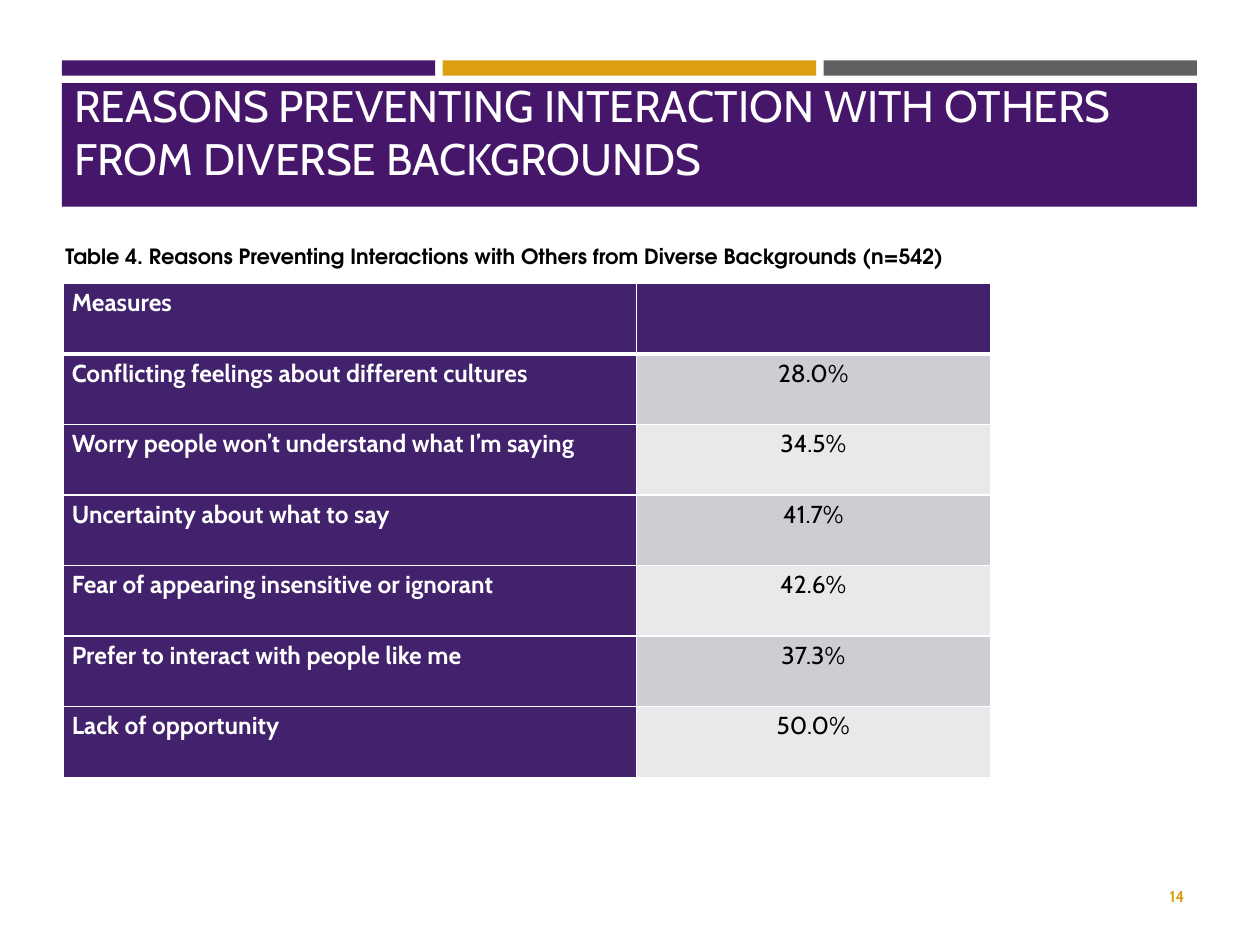
from lxml.etree import SubElement
from pptx import Presentation
from pptx.dml.color import RGBColor
from pptx.enum.shapes import MSO_SHAPE
from pptx.enum.text import MSO_ANCHOR, MSO_AUTO_SIZE, PP_ALIGN
from pptx.oxml.ns import qn
from pptx.util import Inches, Pt

PURPLE = RGBColor(0x46, 0x16, 0x6B)
TABLE_PURPLE = RGBColor(0x42, 0x22, 0x6C)
GOLD = RGBColor(0xDB, 0x9F, 0x11)
NUMBER_GOLD = RGBColor(0xDA, 0x9F, 0x11)
GRAY = RGBColor(0x5F, 0x60, 0x62)
DARK_BAND = RGBColor(0xCF, 0xCD, 0xD4)
LIGHT_BAND = RGBColor(0xE9, 0xE8, 0xEB)
WHITE = RGBColor(0xFF, 0xFF, 0xFF)
BLACK = RGBColor(0, 0, 0)
FONT = "Cabin"
CAPTION_FONT = "TeX Gyre Adventor"

# Content
TITLE = "REASONS PREVENTING INTERACTION WITH OTHERS FROM DIVERSE BACKGROUNDS"
CAPTION = ("Table 4. Reasons Preventing Interactions with Others "
           "from Diverse Backgrounds (n=542)")
PAGE_NUMBER = "14"
ROWS = [
    ("Measures", ""),
    ("Conflicting feelings about different cultures", "28.0%"),
    ("Worry people won’t understand what I’m saying", "34.5%"),
    ("Uncertainty about what to say", "41.7%"),
    ("Fear of appearing insensitive or ignorant", "42.6%"),
    ("Prefer to interact with people like me", "37.3%"),
    ("Lack of opportunity", "50.0%"),
]

# Layout, in inches
LEFT, WIDTH = 0.49, 9.01
BAR_GAP = 0.06
BAR_WIDTH = (WIDTH - 2 * BAR_GAP) / 3
COLUMN_WIDTHS = (4.55, 2.81)
ROW_HEIGHT = 0.56


def style(paragraph, size, color, bold=False, name=FONT, align=PP_ALIGN.LEFT):
    paragraph.alignment = align
    font = paragraph.font
    font.name, font.size, font.bold = name, Pt(size), bold
    font.color.rgb = color


def add_bar(left, top, width, height, color):
    bar = slide.shapes.add_shape(MSO_SHAPE.RECTANGLE, Inches(left), Inches(top),
                                 Inches(width), Inches(height))
    bar.shadow.inherit = False
    bar.fill.solid()
    bar.fill.fore_color.rgb = color
    bar.line.fill.background()
    return bar


def add_text(left, top, width, height, text, anchor):
    box = slide.shapes.add_textbox(Inches(left), Inches(top),
                                   Inches(width), Inches(height))
    frame = box.text_frame
    frame.word_wrap = True
    frame.vertical_anchor = anchor
    frame.text = text
    return frame


def set_borders(cell, bottom_width):
    properties = cell._tc.get_or_add_tcPr()
    for side, width in (("L", 1), ("R", 1), ("T", 1), ("B", bottom_width)):
        line = SubElement(properties, qn(f"a:ln{side}"), w=str(Pt(width)))
        fill = SubElement(line, qn("a:solidFill"))
        SubElement(fill, qn("a:srgbClr"), val=str(WHITE))


presentation = Presentation()
presentation.slide_width, presentation.slide_height = Inches(10), Inches(7.5)
slide = presentation.slides.add_slide(presentation.slide_layouts[5])

# Accent bars and title band
for index, color in enumerate((PURPLE, GOLD, GRAY)):
    add_bar(LEFT + index * (BAR_WIDTH + BAR_GAP), 0.48, BAR_WIDTH, 0.12, color)
title_band = add_bar(LEFT, 0.66, WIDTH, 0.98, PURPLE)

# Title, in front of its band
title = slide.shapes.title
title.left, title.top = Inches(LEFT), Inches(0.75)
title.width, title.height = Inches(WIDTH), Inches(0.76)
title.text_frame.text = TITLE
title.text_frame.word_wrap = True
title.text_frame.auto_size = MSO_AUTO_SIZE.NONE
title.text_frame.vertical_anchor = MSO_ANCHOR.BOTTOM
style(title.text_frame.paragraphs[0], 25.2, WHITE)
title_band._element.addnext(title._element)

# Table
table = slide.shapes.add_table(
    len(ROWS), len(COLUMN_WIDTHS), Inches(0.5), Inches(2.25),
    Inches(sum(COLUMN_WIDTHS)), Inches(ROW_HEIGHT * len(ROWS))).table
for column, width in zip(table.columns, COLUMN_WIDTHS):
    column.width = Inches(width)
for row, texts in enumerate(ROWS):
    table.rows[row].height = Inches(ROW_HEIGHT)
    for column, text in enumerate(texts):
        cell = table.cell(row, column)
        is_heading = row == 0 or column == 0
        cell.text = text
        cell.margin_left = cell.margin_right = Inches(0.07)
        cell.margin_top = cell.margin_bottom = 0
        paragraph = cell.text_frame.paragraphs[0]
        paragraph.line_spacing = 1.15
        style(paragraph, 14, WHITE if is_heading else BLACK, bold=is_heading,
              align=PP_ALIGN.CENTER if column else PP_ALIGN.LEFT)
        set_borders(cell, 3 if row == 0 else 1)
        band = DARK_BAND if row % 2 else LIGHT_BAND
        cell.fill.solid()
        cell.fill.fore_color.rgb = TABLE_PURPLE if is_heading else band

# Caption and page number
caption = add_text(0.42, 1.88, 7.25, 0.5, CAPTION, MSO_ANCHOR.TOP)
caption.margin_right = 0
style(caption.paragraphs[0], 12, BLACK, bold=True, name=CAPTION_FONT)
number = add_text(8.53, 6.91, 0.97, 0.4, PAGE_NUMBER, MSO_ANCHOR.MIDDLE)
style(number.paragraphs[0], 9, NUMBER_GOLD, bold=True, align=PP_ALIGN.RIGHT)

presentation.save("out.pptx")
